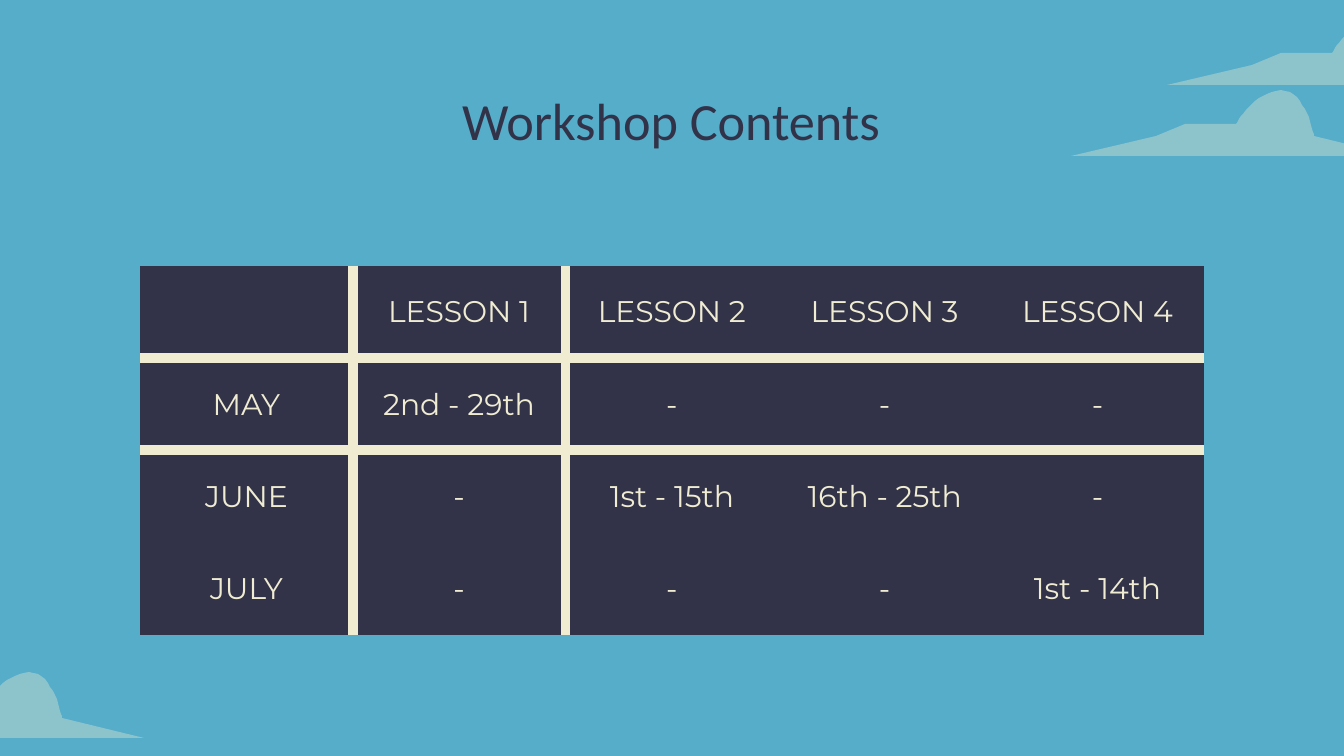
from dataclasses import dataclass

from lxml.etree import SubElement
from pptx import Presentation
from pptx.dml.color import RGBColor
from pptx.enum.text import MSO_ANCHOR, MSO_AUTO_SIZE, PP_ALIGN
from pptx.oxml.ns import qn
from pptx.util import Inches, Pt

PX = Inches(10) / 1344
CLOUD_CORNERS = [(85, 46), (114, 34), (165, 34)]
CLOUD_CURVES = [
    ((165, 34), (165, 34), (184, 1), (210, 0)),
    ((210, 0), (235, 0), (243, 46), (243, 46)),
]
CLOUD_POSITIONS = [(1071, 90), (1167, 19), (-181, 672)]
SCHEDULE = [
    ["", "LESSON 1", "LESSON 2", "LESSON 3", "LESSON 4"],
    ["MAY", "2nd - 29th", "-", "-", "-"],
    ["JUNE", "-", "1st - 15th", "16th - 25th", "-"],
    ["JULY", "-", "-", "-", "1st - 14th"],
]
NO_GRID_STYLE = "{2D5ABB26-0587-4C30-8999-92F81FD0307C}"


@dataclass(frozen=True)
class Theme:
    """Colours, fonts and type sizes of the slide."""

    sky: str = "55ADC9"
    navy: str = "323249"
    cream: str = "EFECD2"
    cloud_opacity: int = 37
    title_font: str = "Calibri"
    title_size: int = 28
    cell_font: str = "Montserrat"
    cell_size: int = 16
    rule_width: int = 6


THEME = Theme()


def px(length):
    """Turn px into EMU."""
    return round(length * PX)


def paint(fill, color):
    """Give a fill one solid colour."""
    fill.solid()
    fill.fore_color.rgb = RGBColor.from_string(color)


def style_text(frame, font_name, size, color, anchor):
    """Centre the text of a frame and set its font and insets."""
    frame.vertical_anchor = anchor
    frame.margin_left = frame.margin_right = Inches(0.1)
    frame.margin_top = frame.margin_bottom = Inches(0.1)
    for paragraph in frame.paragraphs:
        paragraph.alignment = PP_ALIGN.CENTER
        paragraph.font.name = font_name
        paragraph.font.size = Pt(size)
        paragraph.font.color.rgb = RGBColor.from_string(color)


def curve_points(curve, steps=16):
    """Sample a cubic Bézier curve after its first point."""
    points = []
    for step in range(1, steps + 1):
        t = step / steps
        weights = ((1 - t) ** 3, 3 * t * (1 - t) ** 2, 3 * t * t * (1 - t), t ** 3)
        points.append(tuple(
            sum(weight * value for weight, value in zip(weights, axis))
            for axis in zip(*curve)
        ))
    return points


def add_cloud(slide, left, top):
    """Draw a translucent cloud."""
    outline = slide.shapes.build_freeform(0, 66, scale=PX)
    crown = [point for curve in CLOUD_CURVES for point in curve_points(curve)]
    outline.add_line_segments([*CLOUD_CORNERS, *crown, (325, 66)], close=True)
    cloud = outline.convert_to_shape(px(left), px(top))
    paint(cloud.fill, THEME.cream)
    color = cloud.fill._xPr.find(f".//{qn('a:srgbClr')}")
    SubElement(color, qn("a:alpha"), val=str(THEME.cloud_opacity * 1000))
    cloud.line.fill.background()
    cloud.shadow.inherit = False


def add_title(slide, text):
    """Fill the title placeholder and bring it in front of the clouds."""
    title = slide.shapes.title
    title.left, title.top, title.width, title.height = map(px, (165, 79, 1012, 85))
    title.text = text
    style_text(title.text_frame, THEME.title_font, THEME.title_size,
               THEME.navy, MSO_ANCHOR.BOTTOM)
    title.text_frame.auto_size = MSO_AUTO_SIZE.NONE
    slide.shapes._spTree.append(title._element)


def add_borders(cell, sides):
    """Rule the given sides of a cell, named in schema order."""
    properties = cell._tc.get_or_add_tcPr()
    for position, side in enumerate(sides):
        border = SubElement(properties, qn(f"a:ln{side}"), w=str(Pt(THEME.rule_width)))
        fill = SubElement(border, qn("a:solidFill"))
        SubElement(fill, qn("a:srgbClr"), val=THEME.cream)
        properties.insert(position, border)


def add_schedule(slide, rows):
    """Add the lesson table with rules below its header and beside its months."""
    frame = slide.shapes.add_table(len(rows), len(rows[0]), *map(px, (140, 266, 1064, 369)))
    table = frame.table
    table.first_row = table.horz_banding = False
    table._tbl.tblPr.find(qn("a:tableStyleId")).text = NO_GRID_STYLE
    for row, entries in enumerate(rows):
        for column, entry in enumerate(entries):
            cell = table.cell(row, column)
            cell.text = entry
            style_text(cell.text_frame, THEME.cell_font, THEME.cell_size,
                       THEME.cream, MSO_ANCHOR.MIDDLE)
            cell.vertical_anchor = MSO_ANCHOR.MIDDLE
            cell.margin_left = cell.margin_right = Inches(0.1)
            cell.margin_top = cell.margin_bottom = Inches(0.1)
            paint(cell.fill, THEME.navy)
            add_borders(cell, {0: "R", 1: "L"}.get(column, "") + {0: "B", 1: "T"}.get(row, ""))


def main():
    """Build and save the slide."""
    presentation = Presentation()
    presentation.slide_width, presentation.slide_height = px(1344), px(756)
    slide = presentation.slides.add_slide(presentation.slide_layouts[5])
    paint(slide.background.fill, THEME.sky)
    for left, top in CLOUD_POSITIONS:
        add_cloud(slide, left, top)
    add_title(slide, "Workshop Contents")
    add_schedule(slide, SCHEDULE)
    presentation.save("out.pptx")


if __name__ == "__main__":
    main()
